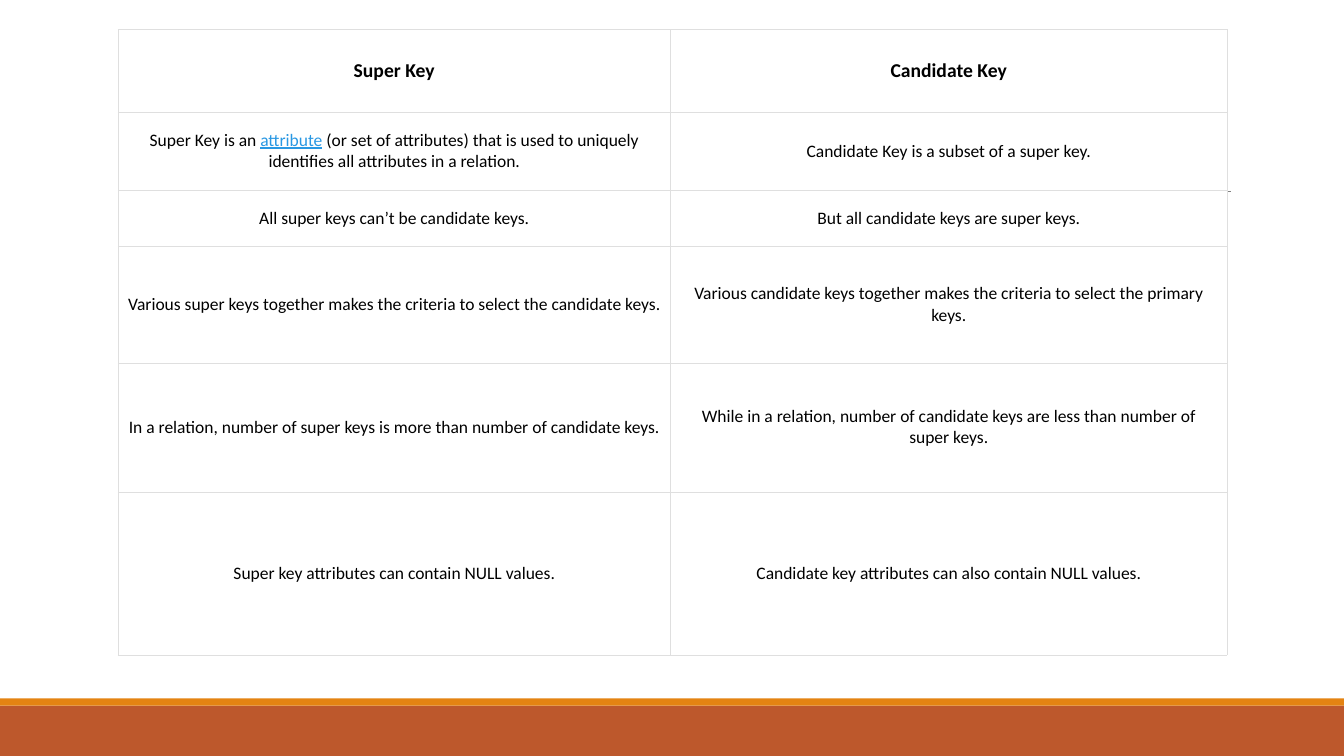
"""Build a slide with a table comparing super keys and candidate keys."""
import pptx
import pptx.dml.color
import pptx.enum.shapes
import pptx.enum.text
import pptx.oxml
import pptx.oxml.ns
import pptx.util

RGBColor = pptx.dml.color.RGBColor
Inches = pptx.util.Inches
Pt = pptx.util.Pt

ROWS = [
    ("Super Key", "Candidate Key"),
    ("Super Key is an |attribute| (or set of attributes) that is used to uniquely "
     "identifies all attributes in a relation.",
     "Candidate Key is a subset of a super key."),
    ("All super keys can’t be candidate keys.",
     "But all candidate keys are super keys."),
    ("Various super keys together makes the criteria to select the candidate keys.",
     "Various candidate keys together makes the criteria to select the primary keys."),
    ("In a relation, number of super keys is more than number of candidate keys.",
     "While in a relation, number of candidate keys are less than number of super keys."),
    ("Super key attributes can contain NULL values.",
     "Candidate key attributes can also contain NULL values."),
]
COL_WIDTHS = [5.48, 5.52]
ROW_HEIGHTS = [0.82, 0.78, 0.55, 1.16, 1.28, 1.62]
TABLE_LEFT, TABLE_TOP = 1.17, 0.29
SLIDE_W, SLIDE_H = 13.33, 7.5
FOOTER_H, STRIPE_H = 0.5, 0.07
RULE_LEFT, RULE_RIGHT, RULE_Y = 1.31, 12.21, 1.9
FONT = "Calibri"
BLACK = RGBColor(0x00, 0x00, 0x00)
WHITE = RGBColor(0xFF, 0xFF, 0xFF)
RUST = RGBColor(0xBD, 0x58, 0x2C)
ORANGE = RGBColor(0xE4, 0x83, 0x12)
RULE_GREY = RGBColor(0x80, 0x80, 0x80)
BORDER_GREY = RGBColor(0xDF, 0xDF, 0xDF)
LINK_BLUE = RGBColor(0x29, 0x98, 0xE3)


def add_band(slide, top, height, color):
    sp = slide.shapes.add_shape(pptx.enum.shapes.MSO_SHAPE.RECTANGLE, 0, Inches(top),
                                Inches(SLIDE_W), Inches(height))
    sp.shadow.inherit = False
    sp.fill.solid()
    sp.fill.fore_color.rgb = color
    sp.line.fill.background()


def add_rule(slide):
    line = slide.shapes.add_connector(
        pptx.enum.shapes.MSO_CONNECTOR.STRAIGHT,
        Inches(RULE_LEFT), Inches(RULE_Y), Inches(RULE_RIGHT), Inches(RULE_Y))
    line.line.color.rgb = RULE_GREY
    line.line.width = Pt(0.5)
    line._element.spPr.append(pptx.oxml.parse_xml(
        f'<a:effectLst {pptx.oxml.ns.nsdecls("a")}/>'))


def set_borders(cell):
    tc_pr = cell._tc.get_or_add_tcPr()
    for i, side in enumerate(("lnL", "lnR", "lnT", "lnB")):
        tc_pr.insert(i, pptx.oxml.parse_xml(
            f'<a:{side} {pptx.oxml.ns.nsdecls("a")} w="{Pt(0.23)}"><a:solidFill>'
            f'<a:srgbClr val="{BORDER_GREY}"/></a:solidFill></a:{side}>'))


def fill_cell(cell, text, is_header, is_first):
    cell.fill.solid()
    cell.fill.fore_color.rgb = WHITE
    cell.vertical_anchor = pptx.enum.text.MSO_ANCHOR.MIDDLE
    cell.margin_left = cell.margin_right = Inches(0.04 if is_header and is_first else 0.1)
    cell.margin_top = cell.margin_bottom = Inches(0.1 if is_header else 0.15)
    set_borders(cell)
    p = cell.text_frame.paragraphs[0]
    p.alignment = pptx.enum.text.PP_ALIGN.CENTER
    p.font.name = FONT
    p.font.size = Pt(14 if is_header else 12.5)
    p.font.bold = is_header
    for i, part in enumerate(text.split("|")):
        r = p.add_run()
        r.text = part
        is_link = i % 2 == 1
        r.font.color.rgb = LINK_BLUE if is_link else BLACK
        r.font.underline = is_link


def add_key_table(slide):
    table = slide.shapes.add_table(
        len(ROWS), len(COL_WIDTHS), Inches(TABLE_LEFT), Inches(TABLE_TOP),
        Inches(sum(COL_WIDTHS)), Inches(sum(ROW_HEIGHTS))).table
    table.horz_banding = False
    for column, width in zip(table.columns, COL_WIDTHS):
        column.width = Inches(width)
    for i, (height, texts) in enumerate(zip(ROW_HEIGHTS, ROWS)):
        table.rows[i].height = Inches(height)
        for j, text in enumerate(texts):
            fill_cell(table.cell(i, j), text, i == 0, j == 0)


def main():
    prs = pptx.Presentation()
    prs.slide_width, prs.slide_height = Inches(SLIDE_W), Inches(SLIDE_H)
    slide = prs.slides.add_slide(prs.slide_layouts.get_by_name("Blank"))
    footer_top = SLIDE_H - FOOTER_H
    add_band(slide, footer_top, FOOTER_H, RUST)
    add_band(slide, footer_top - STRIPE_H, STRIPE_H, ORANGE)
    add_rule(slide)
    add_key_table(slide)
    prs.save("out.pptx")


if __name__ == "__main__":
    main()
